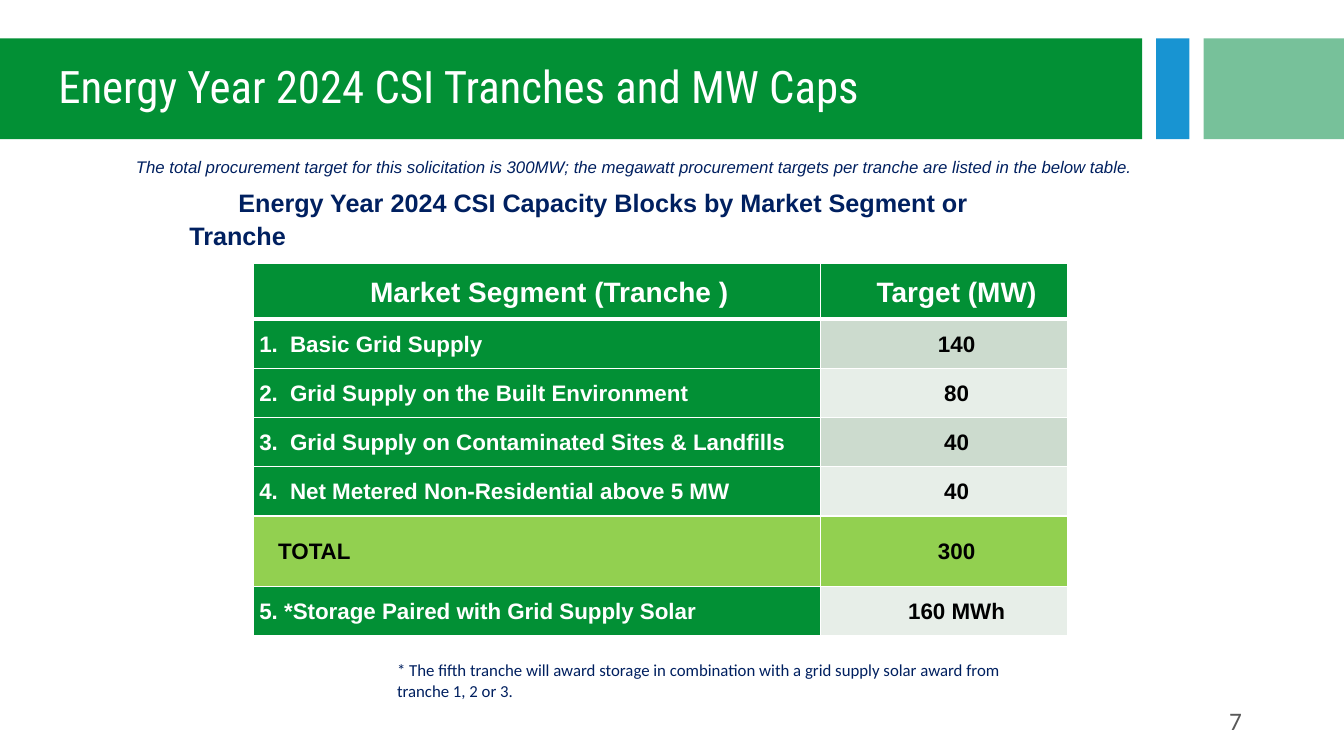
from dataclasses import dataclass, field
from typing import Any

import lxml.etree
import pptx
import pptx.dml.color
import pptx.enum.shapes
import pptx.enum.text
import pptx.oxml.ns
import pptx.util

Pt = pptx.util.Pt
RGBColor = pptx.dml.color.RGBColor
Align = pptx.enum.text.PP_ALIGN
Anchor = pptx.enum.text.MSO_ANCHOR
qn = pptx.oxml.ns.qn

WHITE = RGBColor(0xFF, 0xFF, 0xFF)
BLACK = RGBColor(0x00, 0x00, 0x00)
GREEN = RGBColor(0x02, 0x90, 0x35)
BLUE = RGBColor(0x18, 0x94, 0xD2)
MINT = RGBColor(0x77, 0xC1, 0x9A)
LIME = RGBColor(0x92, 0xD0, 0x50)
NAVY = RGBColor(0x00, 0x20, 0x60)
GRAY = RGBColor(0x59, 0x59, 0x59)
BANDS = (RGBColor(0xCC, 0xDB, 0xCE), RGBColor(0xE7, 0xEE, 0xE8))

BAR_TOP, BAR_HEIGHT = 27.36, 72
CELL_SPACING = {"line_spacing": 1.07, "space_after": Pt(8)}


@dataclass
class Bar:
    left: float
    width: float
    color: RGBColor


@dataclass
class TextBlock:
    """Text with its box in points and its font and paragraph formats."""
    text: str
    left: float
    top: float
    width: float
    height: float
    font: dict[str, Any]
    color: RGBColor
    paragraph: dict[str, Any] = field(default_factory=dict)
    frame: dict[str, Any] = field(default_factory=dict)
    margin_left: float = 0
    indent: float = 0


@dataclass
class TableRow:
    segment: str
    target: str
    height: float = 35.2


BARS = [Bar(825.84, 23.76, BLUE), Bar(859.68, 100.32, MINT), Bar(-1.44, 817.2, GREEN)]

TEXT_BLOCKS = [
    TextBlock(
        "The total procurement target for this solicitation is 300MW; the megawatt "
        "procurement targets per tranche are listed in the below table.",
        90, 110.16, 828, 87.12,
        {"name": "Arial", "size": Pt(12), "italic": True}, NAVY, {"line_spacing": 0.9}),
    TextBlock(
        "7", 678.24, 500.4, 216, 28.8,
        {"name": "Calibri", "size": Pt(18)}, GRAY, {"alignment": Align.RIGHT}),
    TextBlock(
        "Energy Year 2024 CSI Tranches and MW Caps",
        -1.44, BAR_TOP, 817.2, BAR_HEIGHT,
        {"name": "Roboto Condensed", "size": Pt(32)}, WHITE, {"line_spacing": 0.9},
        {"vertical_anchor": Anchor.MIDDLE}, margin_left=36),
    TextBlock(
        "Energy Year 2024 CSI Capacity Blocks by Market Segment or Tranche",
        128.16, 132.5, 630, 44,
        {"name": "Arial", "size": Pt(18), "bold": True}, NAVY, {"line_spacing": 1.07},
        {"margin_top": 0, "margin_bottom": 0}, indent=35),
    TextBlock(
        "* The fifth tranche will award storage in combination with a grid supply "
        "solar award from tranche 1, 2 or 3.",
        258.48, 466.56, 480.96, 38.16,
        {"name": "Calibri", "size": Pt(12)}, NAVY, CELL_SPACING, margin_left=18),
]

TABLE_LEFT, TABLE_TOP = 180.72, 188.2
COLUMN_WIDTHS = (405.36, 176.4)
TABLE_ROWS = [
    TableRow("Market Segment (Tranche )", "Target (MW)", 39.6),
    TableRow("1.\tBasic Grid Supply", "140"),
    TableRow("2.\tGrid Supply on the Built Environment", "80"),
    TableRow("3.\tGrid Supply on Contaminated Sites & Landfills", "40"),
    TableRow("4.\tNet Metered Non-Residential above 5 MW", "40"),
    TableRow("TOTAL", "300", 50.4),
    TableRow("5. *Storage Paired with Grid Supply Solar", "160 MWh"),
]


def apply_formats(target: Any, formats: dict[str, Any]) -> None:
    for name, value in formats.items():
        setattr(target, name, value)


def set_indents(paragraph: Any, margin_left: float, indent: float = 0) -> None:
    properties = paragraph._p.get_or_add_pPr()
    properties.set("marL", str(int(Pt(margin_left))))
    properties.set("indent", str(int(Pt(indent))))


def add_tab_stop(paragraph: Any, position: float) -> None:
    properties = paragraph._p.get_or_add_pPr()
    tab_list = lxml.etree.SubElement(properties, qn("a:tabLst"))
    lxml.etree.SubElement(tab_list, qn("a:tab"), pos=str(int(Pt(position))), algn="l")


def add_bar(slide: Any, bar: Bar) -> None:
    shape = slide.shapes.add_shape(
        pptx.enum.shapes.MSO_SHAPE.RECTANGLE,
        Pt(bar.left), Pt(BAR_TOP), Pt(bar.width), Pt(BAR_HEIGHT))
    shape.shadow.inherit = False
    shape.fill.solid()
    shape.fill.fore_color.rgb = bar.color
    shape.line.fill.background()


def add_text(slide: Any, block: TextBlock) -> None:
    shape = slide.shapes.add_textbox(
        Pt(block.left), Pt(block.top), Pt(block.width), Pt(block.height))
    frame = shape.text_frame
    apply_formats(frame, {"word_wrap": True, **block.frame})
    paragraph = frame.paragraphs[0]
    paragraph.text = block.text
    apply_formats(paragraph, block.paragraph)
    set_indents(paragraph, block.margin_left, block.indent)
    apply_formats(paragraph.runs[0].font, block.font)
    paragraph.runs[0].font.color.rgb = block.color


def add_borders(cell: Any, top: float, bottom: float) -> None:
    properties = cell._tc.get_or_add_tcPr()
    for side, width in {"L": 1, "R": 1, "T": top, "B": bottom}.items():
        line = lxml.etree.SubElement(properties, qn(f"a:ln{side}"), w=str(int(Pt(width))))
        fill = lxml.etree.SubElement(line, qn("a:solidFill"))
        lxml.etree.SubElement(fill, qn("a:srgbClr"), val=str(WHITE))


def fill_cell(cell: Any, text: str, row: int, column: int) -> None:
    is_header, is_total = row == 0, text in ("TOTAL", "300")
    is_segment = column == 0 and not is_header and not is_total
    is_target = column == 1 and not is_header
    apply_formats(cell, {
        "margin_left": 0, "margin_right": 0, "margin_top": 0, "margin_bottom": 0,
        "vertical_anchor": Anchor.MIDDLE})
    add_borders(cell, top=3 if row == 1 else 1, bottom=3 if is_header else 1)
    cell.fill.solid()
    if is_total:
        cell.fill.fore_color.rgb = LIME
    elif is_target:
        cell.fill.fore_color.rgb = BANDS[(row - 1) % 2]
    else:
        cell.fill.fore_color.rgb = GREEN

    paragraph = cell.text_frame.paragraphs[0]
    paragraph.text = text
    apply_formats(paragraph, CELL_SPACING)
    if is_segment:
        set_indents(paragraph, 26.5, -22)
        add_tab_stop(paragraph, 26.5)
    else:
        set_indents(paragraph, 18)
    if is_header or is_target:
        paragraph.alignment = Align.CENTER
    for run in paragraph.runs:
        apply_formats(run.font, {
            "name": "Arial", "size": Pt(20 if is_header else 16), "bold": True})
        run.font.color.rgb = BLACK if is_target or is_total else WHITE


def add_capacity_table(slide: Any) -> None:
    table = slide.shapes.add_table(
        len(TABLE_ROWS), len(COLUMN_WIDTHS), Pt(TABLE_LEFT), Pt(TABLE_TOP),
        Pt(sum(COLUMN_WIDTHS)), Pt(sum(row.height for row in TABLE_ROWS))).table
    for column, width in zip(table.columns, COLUMN_WIDTHS):
        column.width = Pt(width)
    for row_index, row in enumerate(TABLE_ROWS):
        table.rows[row_index].height = Pt(row.height)
        for column_index, text in enumerate((row.segment, row.target)):
            fill_cell(table.cell(row_index, column_index), text, row_index, column_index)


def main() -> None:
    presentation = pptx.Presentation()
    presentation.slide_width, presentation.slide_height = Pt(960), Pt(540)
    slide = presentation.slides.add_slide(presentation.slide_layouts[6])
    for bar in BARS:
        add_bar(slide, bar)
    for block in TEXT_BLOCKS:
        add_text(slide, block)
    add_capacity_table(slide)
    presentation.save("out.pptx")


if __name__ == "__main__":
    main()
